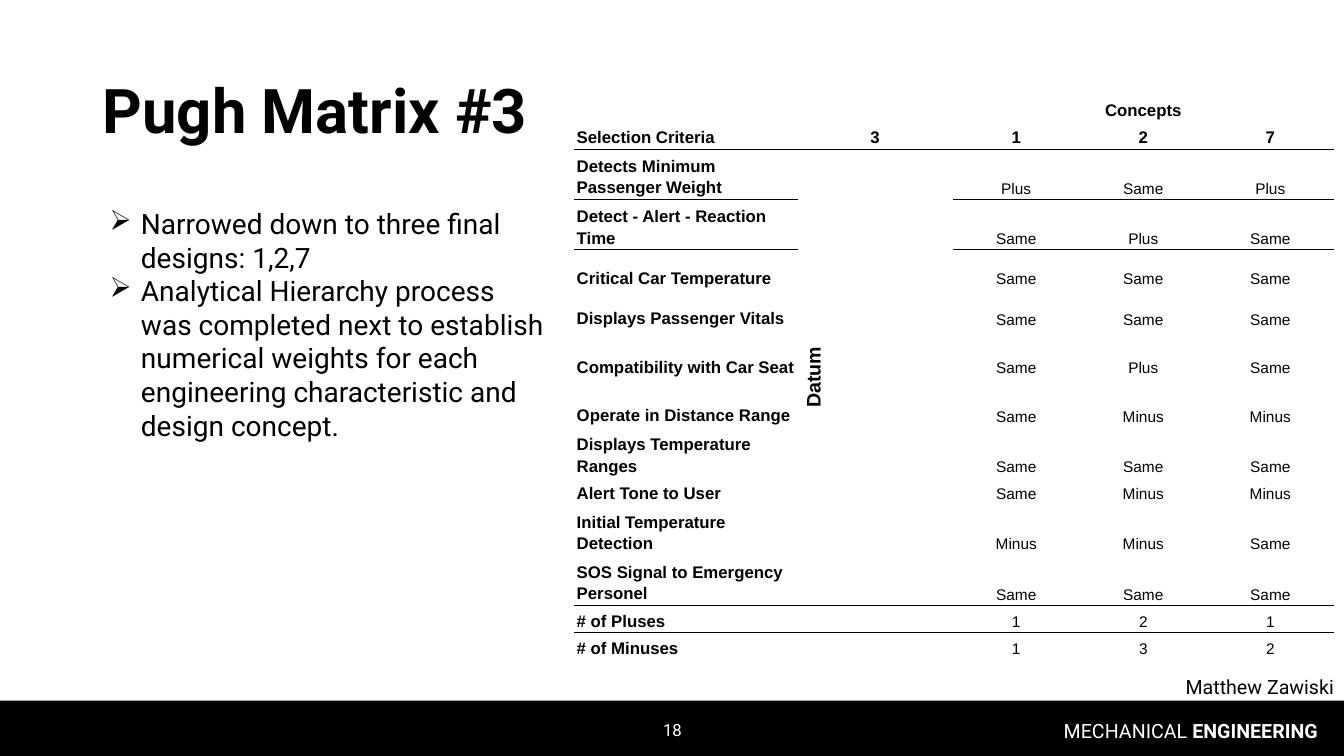
import pptx
import pptx.dml.color
import pptx.enum.shapes
import pptx.enum.text
import pptx.oxml
import pptx.oxml.ns
import pptx.util

Inch = pptx.util.Inches
Align = pptx.enum.text.PP_ALIGN
Anchor = pptx.enum.text.MSO_ANCHOR
BLACK = pptx.dml.color.RGBColor(0, 0, 0)
WHITE = pptx.dml.color.RGBColor(255, 255, 255)
WIDE, HIGH = 13.33, 7.5
PLAIN = "{2D5ABB26-0587-4C30-8999-92F81FD0307C}"  # table style without grid

POINTS = [
    "Narrowed down to three final designs: 1,2,7",
    "Analytical Hierarchy process was completed next to establish numerical "
    "weights for each engineering characteristic and design concept.",
]

# Each text box: place, paragraphs of (text, bold) runs, format values
BOXES = [
    ((10.17, 7.08, 3, 0.4), [[("MECHANICAL ", False), ("ENGINEERING", True)]],
     dict(size=14, color=WHITE, align=Align.RIGHT)),
    ((0.92, 0.4, 11.5, 1.45), [[("Pugh Matrix #3", True)]],
     dict(size=44, anchor=Anchor.MIDDLE, space=0.9)),
    ((0.92, 2, 4.64, 4.67), [[(point, False)] for point in POINTS],
     dict(size=20, bullet="➢")),
    ((5.17, 7.04, 3, 0.4), [[("18", False)]],
     dict(size=12, color=WHITE, align=Align.CENTER, anchor=Anchor.MIDDLE)),
    ((9.83, 6.67, 3.5, 0.25), [[("Matthew Zawiski", False)]],
     dict(size=14, align=Align.RIGHT, space=0.9)),
]

# Each matrix row: height, then its five cells
MATRIX = [
    (0.27, "", "", "Concepts", "", ""),
    (0.27, "Selection Criteria", "3", "1", "2", "7"),
    (0.49, "Detects Minimum Passenger Weight", "Datum", "Plus", "Same", "Plus"),
    (0.49, "Detect - Alert - Reaction Time", "", "Same", "Plus", "Same"),
    (0.4, "Critical Car Temperature", "", "Same", "Same", "Same"),
    (0.4, "Displays Passenger Vitals", "", "Same", "Same", "Same"),
    (0.48, "Compatibility with Car Seat", "", "Same", "Plus", "Same"),
    (0.48, "Operate in Distance Range", "", "Same", "Minus", "Minus"),
    (0.49, "Displays Temperature Ranges", "", "Same", "Same", "Same"),
    (0.27, "Alert Tone to User", "", "Same", "Minus", "Minus"),
    (0.49, "Initial Temperature Detection", "", "Minus", "Minus", "Same"),
    (0.49, "SOS Signal to Emergency Personel", "", "Same", "Same", "Same"),
    (0.27, "# of Pluses", "", "1", "2", "1"),
    (0.27, "# of Minuses", "", "1", "3", "2"),
]
COLS = [2.22, 1.54, 1.26, 1.26, 1.26]
HEAD, FIRST, LAST, PLUSES = 1, 2, 11, 12
RULED = {HEAD, FIRST, LAST, PLUSES}  # rows with a line below


def assign(item, values):
    for name, value in values.items():
        setattr(item, name, value)


def add_run(para, text, face, size, bold, color=BLACK):
    run = para.add_run()
    run.text = text
    assign(run.font, dict(name=face, size=pptx.util.Pt(size), bold=bold))
    run.font.color.rgb = color


def add_mark(para, mark):
    """Give the paragraph a hanging bullet."""
    props = para._p.get_or_add_pPr()
    props.set("marL", str(Inch(0.38)))
    props.set("indent", str(Inch(-0.31)))
    item = pptx.oxml.parse_xml(
        f'<a:buChar {pptx.oxml.ns.nsdecls("a")} char="{mark}"/>')
    props.append(item)


def add_box(slide, place, paras, size, color=BLACK, align=Align.LEFT,
            anchor=Anchor.TOP, space=1.0, bullet=None):
    frame = slide.shapes.add_textbox(*map(Inch, place)).text_frame
    assign(frame, dict(word_wrap=True, vertical_anchor=anchor))
    for index, runs in enumerate(paras):
        para = frame.add_paragraph() if index else frame.paragraphs[0]
        assign(para, dict(alignment=align, line_spacing=space))
        if bullet:
            add_mark(para, bullet)
        for text, bold in runs:
            add_run(para, text, "Roboto", size, bold, color)


def add_line(cell, side):
    cell._tc.get_or_add_tcPr().append(pptx.oxml.parse_xml(
        f'<a:{side} {pptx.oxml.ns.nsdecls("a")} w="9525"><a:solidFill>'
        f'<a:srgbClr val="{BLACK}"/></a:solidFill></a:{side}>'))


def is_ruled(row, col):
    inside = col == 1 and FIRST <= row < LAST
    return row in RULED and not inside


def fill_cell(cell, row, col, text):
    assign(cell, dict(
        margin_left=Inch(0.03), margin_right=Inch(0.03),
        margin_top=Inch(0.02), margin_bottom=Inch(0.02),
        vertical_anchor=Anchor.BOTTOM))
    para = cell.text_frame.paragraphs[0]
    assign(para, dict(alignment=Align.CENTER if col else Align.LEFT,
                      line_spacing=1.15))
    if text == "Datum":
        cell.vertical_anchor = Anchor.MIDDLE
        cell._tc.get_or_add_tcPr().set("vert", "vert270")
        add_run(para, text, "Arial", 14, True)
    elif text:
        bold = col == 0 or row <= HEAD
        add_run(para, text, "Arial", 12 if bold else 11, bold)
    else:
        para._p.get_or_add_endParaRPr().set("sz", "1100")
    if is_ruled(row - 1, col):
        add_line(cell, "lnT")
    if is_ruled(row, col) or (row, col) == (FIRST, 1):
        add_line(cell, "lnB")
    cell.fill.background()


def add_matrix(slide):
    tall = sum(row[0] for row in MATRIX)
    grid = slide.shapes.add_table(
        len(MATRIX), len(COLS), Inch(5.69), Inch(0.94),
        Inch(sum(COLS)), Inch(tall)).table
    assign(grid, dict(first_row=False, horz_banding=False))
    grid._tbl.tblPr.find(pptx.oxml.ns.qn("a:tableStyleId")).text = PLAIN
    for col, width in enumerate(COLS):
        grid.columns[col].width = Inch(width)
    for row, (height, *texts) in enumerate(MATRIX):
        grid.rows[row].height = Inch(height)
        for col, text in enumerate(texts):
            fill_cell(grid.cell(row, col), row, col, text)
    grid.cell(0, 2).merge(grid.cell(0, 4))
    grid.cell(FIRST, 1).merge(grid.cell(LAST, 1))


def main():
    deck = pptx.Presentation()
    assign(deck, dict(slide_width=Inch(WIDE), slide_height=Inch(HIGH)))
    slide = deck.slides.add_slide(deck.slide_layouts[6])
    foot = slide.shapes.add_shape(
        pptx.enum.shapes.MSO_SHAPE.RECTANGLE,
        0, Inch(6.95), Inch(WIDE), Inch(HIGH - 6.95))
    foot.shadow.inherit = False
    foot.fill.solid()
    foot.fill.fore_color.rgb = BLACK
    foot.line.fill.background()
    for place, paras, style in BOXES:
        add_box(slide, place, paras, **style)
    add_matrix(slide)
    deck.save("out.pptx")


if __name__ == "__main__":
    main()
